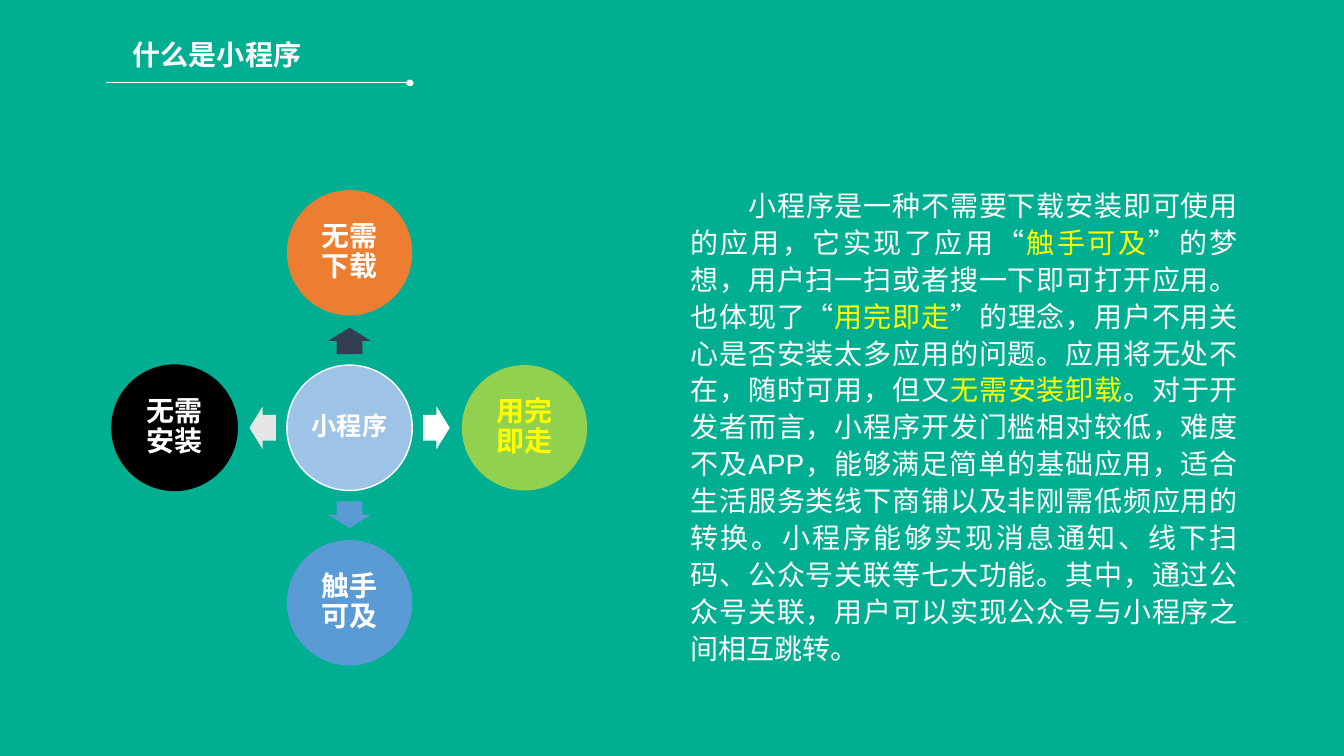
import pptx
import pptx.util
import pptx.dml.color
import pptx.enum.text
import pptx.enum.shapes
import pptx.enum.lang
import lxml.etree

Cm = pptx.util.Cm
Pt = pptx.util.Pt
Rgb = pptx.dml.color.RGBColor.from_string
Kind = pptx.enum.shapes.MSO_SHAPE
Align = pptx.enum.text.PP_ALIGN
Anchor = pptx.enum.text.MSO_ANCHOR

theme = {
    "back": "00AF92", "white": "FFFFFF", "yellow": "FFFF00",
    "hub": "9DC3E6", "orange": "ED7D31", "green": "92D050",
    "blue": "5B9BD5", "black": "000000", "navy": "333F50", "grey": "E7E6E6",
    "size": 20, "small": 18, "font": "Arial", "bold": "Noto Sans CJK SC",
}


def write(shape, runs, size=theme["size"], font=theme["font"], bold=False,
          align=Align.LEFT, anchor=Anchor.MIDDLE, gap=0.9, pad=(0.25, 0.13), indent=0):
    frame = shape.text_frame
    frame.word_wrap = True
    frame.vertical_anchor = anchor
    frame.margin_left = frame.margin_right = Cm(pad[0])
    frame.margin_top = frame.margin_bottom = Cm(pad[1])
    para = frame.paragraphs[0]
    para.alignment = align
    para.line_spacing = gap
    props = para._p.get_or_add_pPr()
    props.set("indent", str(Cm(indent)))
    props.set("hangingPunct", "0")
    for text, color in runs:
        run = para.add_run()
        run.text = text
        run.font.size = Pt(size)
        run.font.name = font
        run.font.bold = bold
        run.font.color.rgb = Rgb(theme[color])
        run.font.language_id = pptx.enum.lang.MSO_LANGUAGE_ID.SIMPLIFIED_CHINESE


def draw(kind, mid, size, fill, line=None):
    shape = slide.shapes.add_shape(
        kind, Cm(mid[0] - size[0] / 2), Cm(mid[1] - size[1] / 2), Cm(size[0]), Cm(size[1]))
    shape.shadow.inherit = False
    shape.fill.solid()
    shape.fill.fore_color.rgb = Rgb(theme[fill])
    if line:
        shape.line.color.rgb = Rgb(theme[line])
        shape.line.width = Pt(1)
    else:
        shape.line.fill.background()
    return shape


deck = pptx.Presentation()
deck.slide_width = Cm(33.87)
deck.slide_height = Cm(19.05)
slide = deck.slides.add_slide(deck.slide_layouts[6])
slide.background.fill.solid()
slide.background.fill.fore_color.rgb = Rgb(theme["back"])

body = slide.shapes.add_textbox(Cm(17.15), Cm(3.33), Cm(14.3), Cm(14.33))
write(body, [
    ("小程序是一种不需要下载安装即可使用的应用，它实现了应用“", "white"),
    ("触手可及", "yellow"),
    ("”的梦想，用户扫一扫或者搜一下即可打开应用。也体现了“", "white"),
    ("用完即走", "yellow"),
    ("”的理念，用户不用关心是否安装太多应用的问题。应用将无处不在，随时可用，但又", "white"),
    ("无需安装卸载", "yellow"),
    ("。对于开发者而言，小程序开发门槛相对较低，难度不及APP，能够满足简单的基础应用，"
     "适合生活服务类线下商铺以及非刚需低频应用的转换。小程序能够实现消息通知、线下扫码、"
     "公众号关联等七大功能。其中，通过公众号关联，用户可以实现公众号与小程序之间相互跳转。", "white"),
], align=Align.JUSTIFY, anchor=Anchor.TOP, gap=1.1, indent=1.46)
body.text_frame.margin_top = Cm(1.33)

title = slide.shapes.add_textbox(Cm(3.1), Cm(0.71), Cm(9.88), Cm(1.45))
write(title, [("什么是小程序", "white")], bold=True)

rule = slide.shapes.add_connector(
    pptx.enum.shapes.MSO_CONNECTOR.STRAIGHT, Cm(2.67), Cm(2.08), Cm(10.24), Cm(2.08))
rule.line.color.rgb = Rgb(theme["white"])
rule.line.width = Pt(0.5)
lxml.etree.SubElement(rule._element.spPr, pptx.oxml.ns.qn("a:effectLst"))
draw(Kind.OVAL, (10.33, 2.09), (0.15, 0.13), "white", "white")

hub = (8.81, 10.78)
disc = (3.16, 3.16)
step, reach = 4.41, 2.19
look = {"font": theme["bold"], "bold": True, "align": Align.CENTER, "pad": (0.1, 0.1)}

core = draw(Kind.OVAL, hub, disc, "hub", "white")
write(core, [("小程序", "white")], size=theme["small"], **look)

arms = [
    ("无需下载", "white", "orange", None, "navy", 270, 0, -1),
    ("用完即走", "yellow", "green", None, "white", 0, 1, 0),
    ("触手可及", "white", "blue", None, "blue", 90, 0, 1),
    ("无需安装", "white", "black", "black", "grey", 180, -1, 0),
]
for text, ink, fill, line, tint, turn, dx, dy in arms:
    arrow = draw(Kind.RIGHT_ARROW, (hub[0] + dx * reach, hub[1] + dy * reach), (0.67, 1.08), tint)
    arrow.adjustments[0] = 0.6
    arrow.rotation = turn
    ball = draw(Kind.OVAL, (hub[0] + dx * step, hub[1] + dy * step), disc, fill, line)
    write(ball, [(text, ink)], **look)

deck.save("out.pptx")
